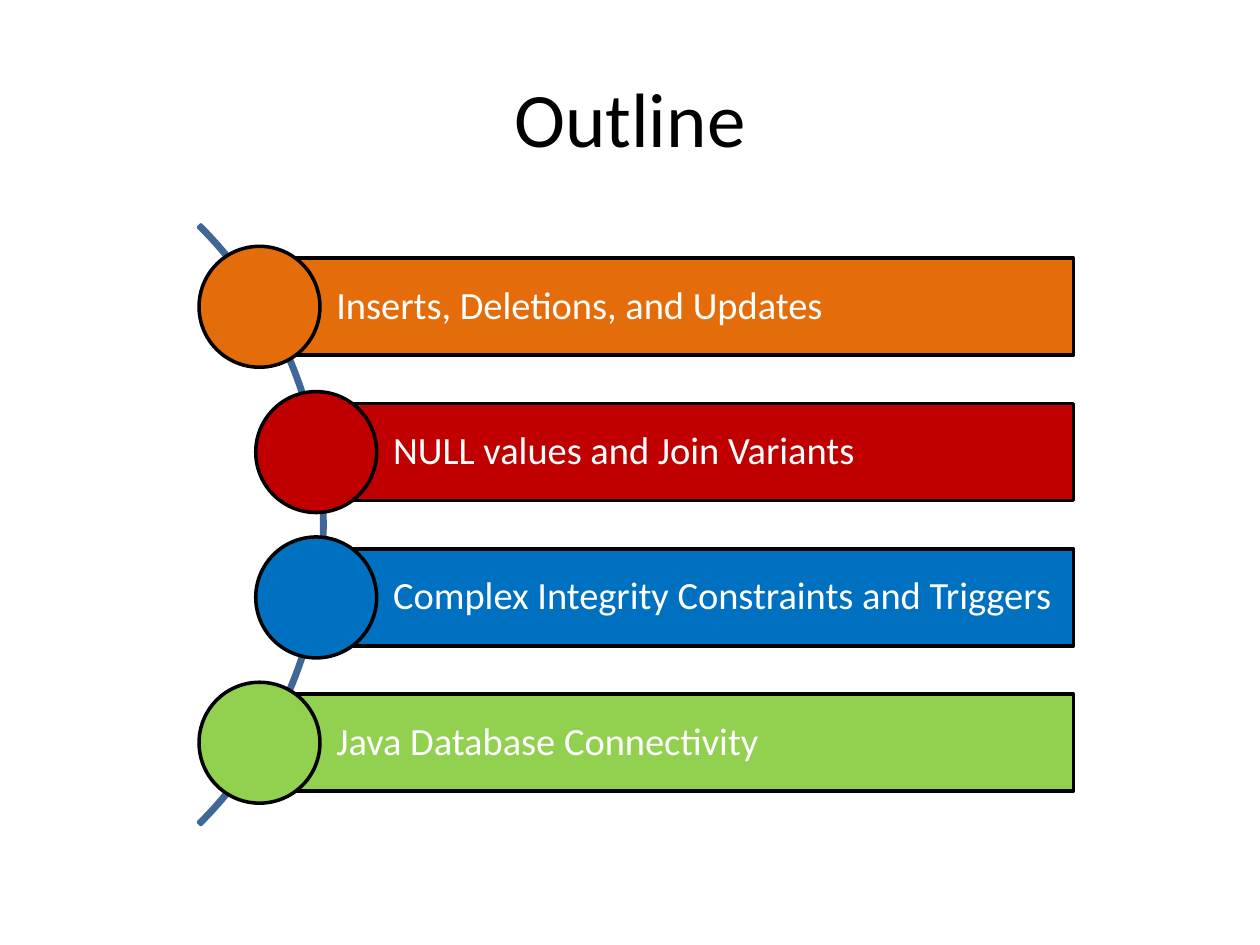
from pptx import Presentation
from pptx.dml.color import RGBColor
from pptx.enum.shapes import MSO_SHAPE
from pptx.enum.text import MSO_ANCHOR, PP_ALIGN
from pptx.util import Inches, Pt

BLACK = RGBColor(0x00, 0x00, 0x00)
WHITE = RGBColor(0xFF, 0xFF, 0xFF)
ARC_BLUE = RGBColor(0x3F, 0x67, 0x97)
ORANGE = RGBColor(0xE4, 0x6C, 0x0A)
RED = RGBColor(0xC0, 0x00, 0x00)
BLUE = RGBColor(0x00, 0x70, 0xC0)
GREEN = RGBColor(0x92, 0xD0, 0x50)

OUTER, INNER = 2.06, 2.51  # circle centres, where the bars begin

TITLE = "Outline"
TOPICS = [
    ("Inserts, Deletions, and Updates", ORANGE, OUTER),
    ("NULL values and Join Variants", RED, INNER),
    ("Complex Integrity Constraints and Triggers", BLUE, INNER),
    ("Java Database Connectivity", GREEN, OUTER),
]

BAR_RIGHT = 8.52
BAR_HEIGHT = 0.77
FIRST_TOP, LAST_TOP = 2.05, 5.51
CIRCLE_SIZE = 0.96
ARC_BOX = (-4.15, 0.8, 6.73, 6.73)
ARC_ADJUSTMENTS = (189, 27, 0.004)  # from 315 to 45 degrees, hairline thick


def add_outlined(page, kind, box, line_color, fill_color=None):
    shape = page.shapes.add_shape(kind, *map(Inches, box))
    shape.shadow.inherit = False
    if fill_color is None:
        shape.fill.background()
    else:
        shape.fill.solid()
        shape.fill.fore_color.rgb = fill_color
    shape.line.color.rgb = line_color
    shape.line.width = Pt(2)
    return shape


def write(shape, text, size, color, align):
    frame = shape.text_frame
    frame.word_wrap = True
    frame.vertical_anchor = MSO_ANCHOR.MIDDLE
    para = frame.paragraphs[0]
    para.alignment = align
    span = para.add_run()
    span.text = text
    span.font.name = "Calibri"
    span.font.size = Pt(size)
    span.font.color.rgb = color
    return frame


def add_topic(page, text, color, center_x, top):
    bar = add_outlined(page, MSO_SHAPE.RECTANGLE,
                       (center_x, top, BAR_RIGHT - center_x, BAR_HEIGHT), BLACK, color)
    frame = write(bar, text, 22, WHITE, PP_ALIGN.LEFT)
    frame.margin_left = Inches(0.61)
    frame.margin_top = frame.margin_right = frame.margin_bottom = Inches(0.06)
    frame.paragraphs[0].line_spacing = 0.9

    circle_top = top + (BAR_HEIGHT - CIRCLE_SIZE) / 2
    add_outlined(page, MSO_SHAPE.OVAL,
                 (center_x - CIRCLE_SIZE / 2, circle_top, CIRCLE_SIZE, CIRCLE_SIZE),
                 BLACK, color)


def main():
    deck = Presentation()
    deck.slide_width, deck.slide_height = Inches(10), Inches(7.5)
    page = deck.slides.add_slide(deck.slide_layouts[6])

    title = page.shapes.add_textbox(Inches(0.5), Inches(0.3), Inches(9), Inches(1.25))
    write(title, TITLE, 44, BLACK, PP_ALIGN.CENTER)

    arc = add_outlined(page, MSO_SHAPE.BLOCK_ARC, ARC_BOX, ARC_BLUE)
    for index, value in enumerate(ARC_ADJUSTMENTS):
        arc.adjustments[index] = value

    step = (LAST_TOP - FIRST_TOP) / (len(TOPICS) - 1)
    for index, (text, color, center_x) in enumerate(TOPICS):
        add_topic(page, text, color, center_x, FIRST_TOP + index * step)

    deck.save("out.pptx")


if __name__ == "__main__":
    main()
